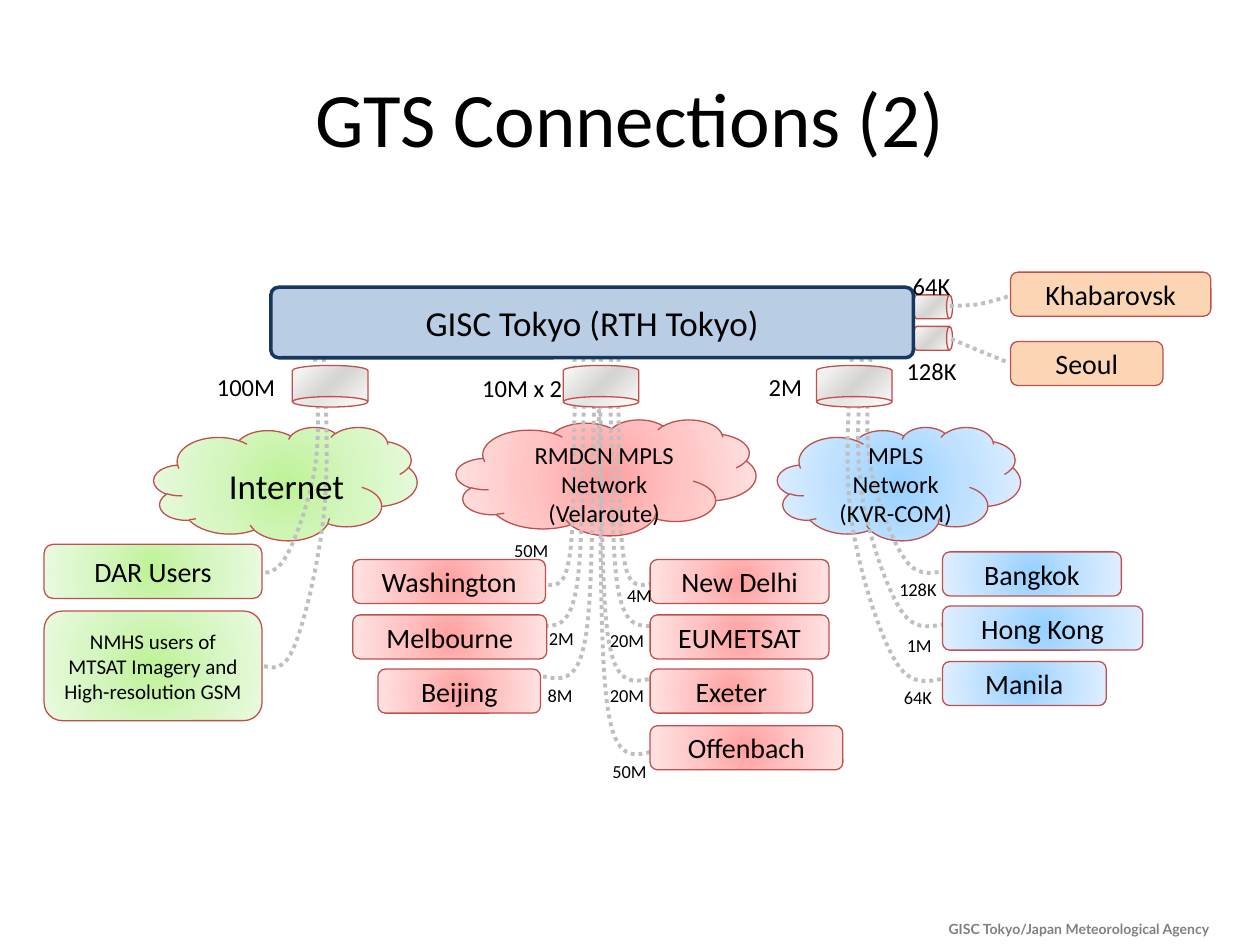
from typing import NamedTuple

from lxml import etree
from pptx import Presentation
from pptx.dml.color import RGBColor
from pptx.enum.dml import MSO_LINE
from pptx.enum.shapes import MSO_SHAPE
from pptx.enum.text import MSO_ANCHOR, PP_ALIGN
from pptx.oxml.ns import qn
from pptx.util import Inches, Pt

CENTER, LEFT = PP_ALIGN.CENTER, PP_ALIGN.LEFT
TOP, MIDDLE = MSO_ANCHOR.TOP, MSO_ANCHOR.MIDDLE
ROUND_RECT, CLOUD, CAN = MSO_SHAPE.ROUNDED_RECTANGLE, MSO_SHAPE.CLOUD, MSO_SHAPE.CAN
DOTTED = MSO_LINE.ROUND_DOT

BLACK = RGBColor(0x00, 0x00, 0x00)
GRAY = RGBColor(0x80, 0x80, 0x80)
CABLE_GRAY = RGBColor(0xBF, 0xBF, 0xBF)
OUTLINE_RED = RGBColor(0xC0, 0x50, 0x4D)
NAVY = RGBColor(0x17, 0x37, 0x5E)
HUB_BLUE = RGBColor(0xB9, 0xCD, 0xE5)
PEACH = RGBColor(0xFC, 0xD5, 0xB5)

Point = tuple[float, float]


class Glow(NamedTuple):
    colors: tuple[RGBColor, RGBColor, RGBColor]
    focus: tuple[int, int, int, int] = (50, 50, 50, 50)


RED = Glow((RGBColor(0xFF, 0xA0, 0xA0), RGBColor(0xFF, 0xC5, 0xC5), RGBColor(0xFF, 0xE3, 0xE3)))
BLUE = Glow((RGBColor(0x96, 0xD0, 0xFF), RGBColor(0xBF, 0xE1, 0xFF), RGBColor(0xE0, 0xEF, 0xFF)))
GREEN = Glow((RGBColor(0xBE, 0xF2, 0x97), RGBColor(0xD5, 0xF6, 0xC0), RGBColor(0xEA, 0xFA, 0xE0)))
METAL = Glow((RGBColor(0xFC, 0xFB, 0xF9), RGBColor(0xD4, 0xD4, 0xD2), RGBColor(0xFC, 0xFB, 0xF9)),
             (100, 100, 0, 0))


class Node(NamedTuple):
    left: float
    top: float
    width: float
    height: float
    paint: Glow | RGBColor
    text: str = ""
    size: float = 16


class Label(NamedTuple):
    text: str
    left: float
    top: float
    width: float = 0.95
    height: float = 0.29
    size: float = 10.5


class Cable(NamedTuple):
    trunk_x: float
    site_x: float
    depth: float
    top: float = 2.84


CLOUDS = [Node(3.62, 3.33, 2.38, 0.92, RED), Node(6.17, 3.39, 1.93, 0.9, BLUE),
          Node(1.22, 3.39, 2.09, 0.9, GREEN)]
SITES = [
    Node(8.02, 2.71, 1.21, 0.35, PEACH, "Seoul"),
    Node(8.02, 2.16, 1.59, 0.35, PEACH, "Khabarovsk"),
    Node(0.35, 4.32, 1.73, 0.43, GREEN, "DAR Users"),
    Node(0.35, 4.85, 1.73, 0.87, GREEN,
         "NMHS users of MTSAT Imagery and High-resolution GSM", 12),
    Node(2.8, 4.88, 1.54, 0.35, RED, "Melbourne"),
    Node(2.8, 4.44, 1.53, 0.35, RED, "Washington"),
    Node(3, 5.31, 1.29, 0.35, RED, "Beijing"),
    Node(5.16, 5.31, 1.29, 0.35, RED, "Exeter"),
    Node(5.16, 4.44, 1.42, 0.35, RED, "New Delhi"),
    Node(5.16, 4.88, 1.42, 0.35, RED, "EUMETSAT"),
    Node(7.48, 5.25, 1.3, 0.35, BLUE, "Manila"),
    Node(7.48, 4.81, 1.59, 0.35, BLUE, "Hong Kong"),
    Node(7.48, 4.38, 1.42, 0.35, BLUE, "Bangkok"),
    Node(5.16, 5.76, 1.53, 0.35, RED, "Offenbach"),
]
HUB = Node(2.15, 2.28, 5.1, 0.56, HUB_BLUE, "GISC Tokyo (RTH Tokyo)", 20)
DRUMS = [Node(left, 2.9, 0.6, 0.33, METAL) for left in (6.48, 4.47, 2.32)]
PLUGS = [Node(7.31, top, 0.19, 0.31, METAL) for top in (2.28, 2.53)]

LABELS = [
    Label("10M x 2", 3.67, 2.91, height=0.26, size=14),
    Label("2M ", 5.78, 2.9, height=0.26, size=14),
    Label("100M ", 1.5, 2.9, height=0.26, size=14),
    Label("128K ", 6.94, 2.78, height=0.26, size=14),
    Label("64K ", 6.94, 2.1, height=0.26, size=14),
    Label("MPLS\nNetwork\n(KVR-COM)", 6.21, 3.44, 1.8, 0.81, 14),
    Label("RMDCN MPLS\nNetwork\n(Velaroute)", 3.77, 3.44, 2.05, 0.81, 14),
    Label("Internet", 1.53, 3.64, 1.49, 0.34, 20),
    Label("50M", 3.74, 4.23), Label("4M", 4.6, 4.59), Label("20M", 4.5, 4.94),
    Label("20M", 4.5, 5.38), Label("50M", 4.52, 5.98),
    Label("2M", 3.98, 4.93), Label("8M", 3.97, 5.38),
    Label("128K", 6.81, 4.54), Label("1M", 6.82, 4.98), Label("64K", 6.81, 5.4),
]

STEEP = [(0, 0), (-0.02, 0.06), (-0.02, 0.11), (0, 0.26), (0.03, 0.41),
         (0, 0.76), (0.18, 0.88), (0.33, 1), (0.67, 0.99), (1, 0.98)]
SLOPING = [(0, 0), (-0.04, 0.17), (-0.08, 0.34), (0, 0.5), (0.08, 0.65),
           (0.3, 0.84), (0.47, 0.92), (0.63, 1), (0.81, 0.99), (1, 0.98)]
STEEP_CABLES = [Cable(4.91, 5.16, 1.83), Cable(4.85, 5.24, 2.16), Cable(4.77, 5.16, 2.6),
                Cable(4.71, 4.31, 2.58), Cable(4.63, 4.24, 2.16), Cable(4.56, 4.31, 1.83),
                Cable(4.76, 5.16, 3.03, 3)]
SLOPING_CABLES = [Cable(2.5, 1.99, 1.73), Cable(2.57, 2.07, 2.49),
                  Cable(6.91, 7.48, 1.73), Cable(6.84, 7.48, 2.16), Cable(6.76, 7.48, 2.6)]
KHABAROVSK_LINE = [(7.54, 2.43), (7.73, 2.42), (7.81, 2.41), (7.91, 2.38), (8.01, 2.35)]
SEOUL_LINE = [(7.55, 2.69), (7.74, 2.77), (8.01, 2.88)]


def apply_glow(shape, glow: Glow) -> None:
    shape.fill.gradient()
    gradient = shape.fill._xPr.find(qn("a:gradFill"))
    for child in list(gradient):
        gradient.remove(child)
    stops = etree.SubElement(gradient, qn("a:gsLst"))
    for position, color in zip((0, 50000, 100000), glow.colors):
        stop = etree.SubElement(stops, qn("a:gs"), pos=str(position))
        etree.SubElement(stop, qn("a:srgbClr"), val=str(color))
    circle = etree.SubElement(gradient, qn("a:path"), path="circle")
    edges = {side: str(value * 1000) for side, value in zip("ltrb", glow.focus)}
    etree.SubElement(circle, qn("a:fillToRect"), **edges)


def write(frame, text: str, size: float, align=CENTER, color=BLACK,
          font="Calibri", bold=False, anchor=TOP) -> None:
    frame.text = text
    frame.vertical_anchor = anchor
    for paragraph in frame.paragraphs:
        paragraph.alignment = align
        paragraph.font.size = Pt(size)
        paragraph.font.name = font
        paragraph.font.bold = bold
        paragraph.font.color.rgb = color


def draw_node(slide, node: Node, kind=ROUND_RECT, rotation: float = 0,
              outline=OUTLINE_RED, weight: float = 0.75):
    shape = slide.shapes.add_shape(kind, Inches(node.left), Inches(node.top),
                                   Inches(node.width), Inches(node.height))
    shape.rotation = rotation
    shape.shadow.inherit = False
    if isinstance(node.paint, Glow):
        apply_glow(shape, node.paint)
    else:
        shape.fill.solid()
        shape.fill.fore_color.rgb = node.paint
    shape.line.color.rgb = outline
    shape.line.width = Pt(weight)
    if node.text:
        write(shape.text_frame, node.text, node.size, anchor=MIDDLE)
    return shape


def draw_label(slide, label: Label, wrap: bool = True, **style) -> None:
    box = slide.shapes.add_textbox(Inches(label.left), Inches(label.top),
                                   Inches(label.width), Inches(label.height))
    box.text_frame.word_wrap = wrap
    write(box.text_frame, label.text, label.size, **style)


def bend(line, straight: int) -> None:
    segments = list(line._element.iter(qn("a:lnTo")))[straight:]
    for first in range(0, len(segments), 3):
        curve = etree.Element(qn("a:cubicBezTo"))
        segments[first].addprevious(curve)
        for segment in segments[first:first + 3]:
            curve.append(segment[0])
            segment.getparent().remove(segment)


def draw_dotted(slide, points: list[Point], straight: int = 0) -> None:
    start, *rest = [(Inches(x), Inches(y)) for x, y in points]
    builder = slide.shapes.build_freeform(*start)
    builder.add_line_segments(rest, close=False)
    line = builder.convert_to_shape()
    bend(line, straight)
    line.shadow.inherit = False
    line.fill.background()
    line.line.color.rgb = CABLE_GRAY
    line.line.width = Pt(2.25)
    line.line.dash_style = DOTTED


def draw_cable(slide, cable: Cable, profile: list[Point]) -> None:
    reach = cable.site_x - cable.trunk_x
    draw_dotted(slide, [(cable.trunk_x + x * reach, cable.top + y * cable.depth)
                        for x, y in profile])


def main() -> None:
    deck = Presentation()
    deck.slide_width, deck.slide_height = Inches(10), Inches(7.5)
    slide = deck.slides.add_slide(deck.slide_layouts[6])
    draw_label(slide, Label("GISC Tokyo/Japan Meteorological Agency", 7.43, 7.26, 2.57, 0.24, 8),
               wrap=False, align=LEFT, color=GRAY, font="Lato", bold=True)
    draw_label(slide, Label("GTS Connections (2)", 0.5, 0.3, 9, 1.25, 44), anchor=MIDDLE)
    for cloud in CLOUDS:
        draw_node(slide, cloud, CLOUD)
    for plug in PLUGS:
        draw_node(slide, plug, CAN, 90)
    draw_dotted(slide, KHABAROVSK_LINE, straight=1)
    draw_dotted(slide, SEOUL_LINE, straight=2)
    for cables, profile in ((STEEP_CABLES, STEEP), (SLOPING_CABLES, SLOPING)):
        for cable in cables:
            draw_cable(slide, cable, profile)
    for site in SITES:
        draw_node(slide, site)
    for drum in DRUMS:
        draw_node(slide, drum, CAN, 180)
    hub = draw_node(slide, HUB, outline=NAVY, weight=2)
    hub.adjustments[0] = 0.11
    for label in LABELS:
        draw_label(slide, label)
    deck.save("out.pptx")


if __name__ == "__main__":
    main()
